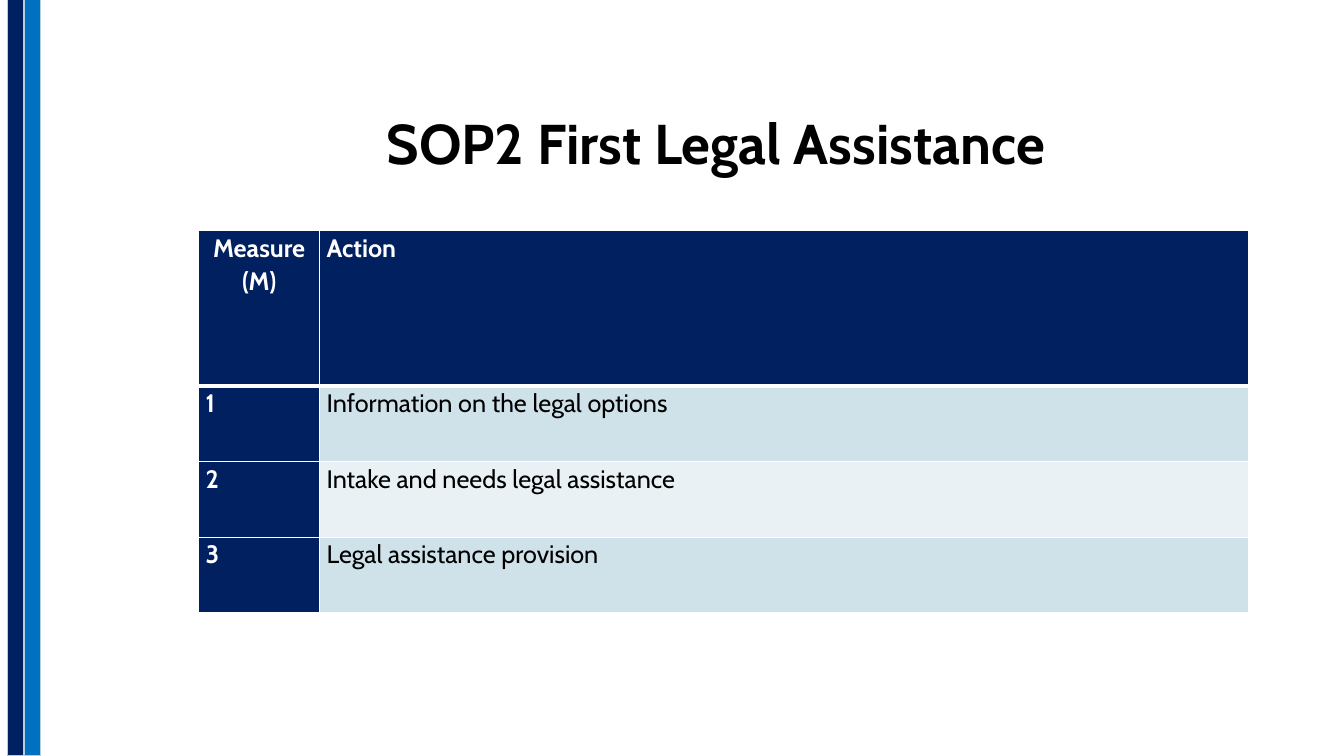
from dataclasses import dataclass

from lxml.etree import SubElement
from pptx import Presentation
from pptx.dml.color import RGBColor
from pptx.enum.shapes import MSO_SHAPE as SHAPE
from pptx.enum.text import MSO_ANCHOR as ANCHOR, MSO_AUTO_SIZE as AUTO, PP_ALIGN as ALIGN
from pptx.oxml.ns import qn
from pptx.util import Inches, Pt

NAVY, BLUE, WHITE, BLACK = "002060", "0070C0", "FFFFFF", "000000"
BANDS = ("D0E2E9", "E9F1F4")
BAR_LINE = "B3D1DD"
ACTIONS = (
    "Information on the legal options",
    "Intake and needs legal assistance",
    "Legal assistance provision",
)


@dataclass
class Bar:
    left: float
    fill: str


@dataclass
class CellStyle:
    fill: str
    color: str
    bold: bool
    align: ALIGN = ALIGN.JUSTIFY
    top: float = 1
    bottom: float = 1


BARS = (Bar(0.07, NAVY), Bar(0.24, BLUE))


def rgb(value: str) -> RGBColor:
    return RGBColor.from_string(value)


def apply(target, values: dict) -> None:
    for name, value in values.items():
        setattr(target, name, value)


def write(tf, text: str, size: float, color: str, bold: bool, align, spacing: float) -> None:
    p = tf.paragraphs[0]
    apply(p, {"alignment": align, "line_spacing": spacing})
    r = p.add_run()
    r.text = text
    apply(r.font, {"name": "Cabin", "size": Pt(size), "bold": bold})
    r.font.color.rgb = rgb(color)


def add_title(slide, text: str) -> None:
    sp = slide.shapes.title
    apply(sp, {"left": Inches(1.62), "top": Inches(0.75),
               "width": Inches(10.96), "height": Inches(1.92)})
    tf = sp.text_frame
    apply(tf, {"auto_size": AUTO.NONE, "word_wrap": True, "vertical_anchor": ANCHOR.MIDDLE,
               "margin_top": Inches(0.05), "margin_bottom": Inches(0.65)})
    write(tf, text, 40, BLACK, True, ALIGN.CENTER, 1.0)


def add_borders(cell, widths: dict) -> None:
    tc_pr = cell._tc.get_or_add_tcPr()
    for side, width in widths.items():
        ln = SubElement(tc_pr, qn(f"a:ln{side}"), w=str(Pt(width)))
        SubElement(SubElement(ln, qn("a:solidFill")), qn("a:srgbClr"), val=WHITE)


def fill_cell(cell, text: str, style: CellStyle) -> None:
    apply(cell, {"margin_left": Inches(0.07), "margin_right": Inches(0.07),
                 "margin_top": 0, "margin_bottom": 0, "vertical_anchor": ANCHOR.TOP})
    add_borders(cell, {"L": 1, "R": 1, "T": style.top, "B": style.bottom})
    cell.fill.solid()
    cell.fill.fore_color.rgb = rgb(style.fill)
    write(cell.text_frame, text, 18, style.color, style.bold, style.align, 1.07)


def add_measures(slide) -> None:
    widths, heights = (1.2, 9.21), (1.54,) + (0.75,) * len(ACTIONS)
    table = slide.shapes.add_table(
        len(heights), len(widths), Inches(1.97), Inches(2.29),
        Inches(sum(widths)), Inches(sum(heights))).table
    for column, width in zip(table.columns, widths):
        column.width = Inches(width)
    for row, height in zip(table.rows, heights):
        row.height = Inches(height)
    fill_cell(table.cell(0, 0), "Measure (M)",
              CellStyle(NAVY, WHITE, True, ALIGN.CENTER, bottom=3))
    fill_cell(table.cell(0, 1), "Action", CellStyle(NAVY, WHITE, True, bottom=3))
    for number, action in enumerate(ACTIONS, 1):
        top = 3 if number == 1 else 1
        band = BANDS[(number - 1) % 2]
        fill_cell(table.cell(number, 0), str(number), CellStyle(NAVY, WHITE, True, top=top))
        fill_cell(table.cell(number, 1), action, CellStyle(band, BLACK, False, top=top))


def add_bar(slide, bar: Bar) -> None:
    sp = slide.shapes.add_shape(
        SHAPE.RECTANGLE, Inches(bar.left), 0, Inches(0.16), Inches(7.5))
    sp.shadow.inherit = False
    sp.fill.solid()
    sp.fill.fore_color.rgb = rgb(bar.fill)
    sp.line.color.rgb = rgb(BAR_LINE)
    sp.line.width = Pt(0.75)


def main() -> None:
    prs = Presentation()
    apply(prs, {"slide_width": Inches(13.33), "slide_height": Inches(7.5)})
    slide = prs.slides.add_slide(prs.slide_layouts.get_by_name("Title Only"))
    add_title(slide, "SOP2 First Legal Assistance")
    add_measures(slide)
    for bar in BARS:
        add_bar(slide, bar)
    prs.save("out.pptx")


if __name__ == "__main__":
    main()
